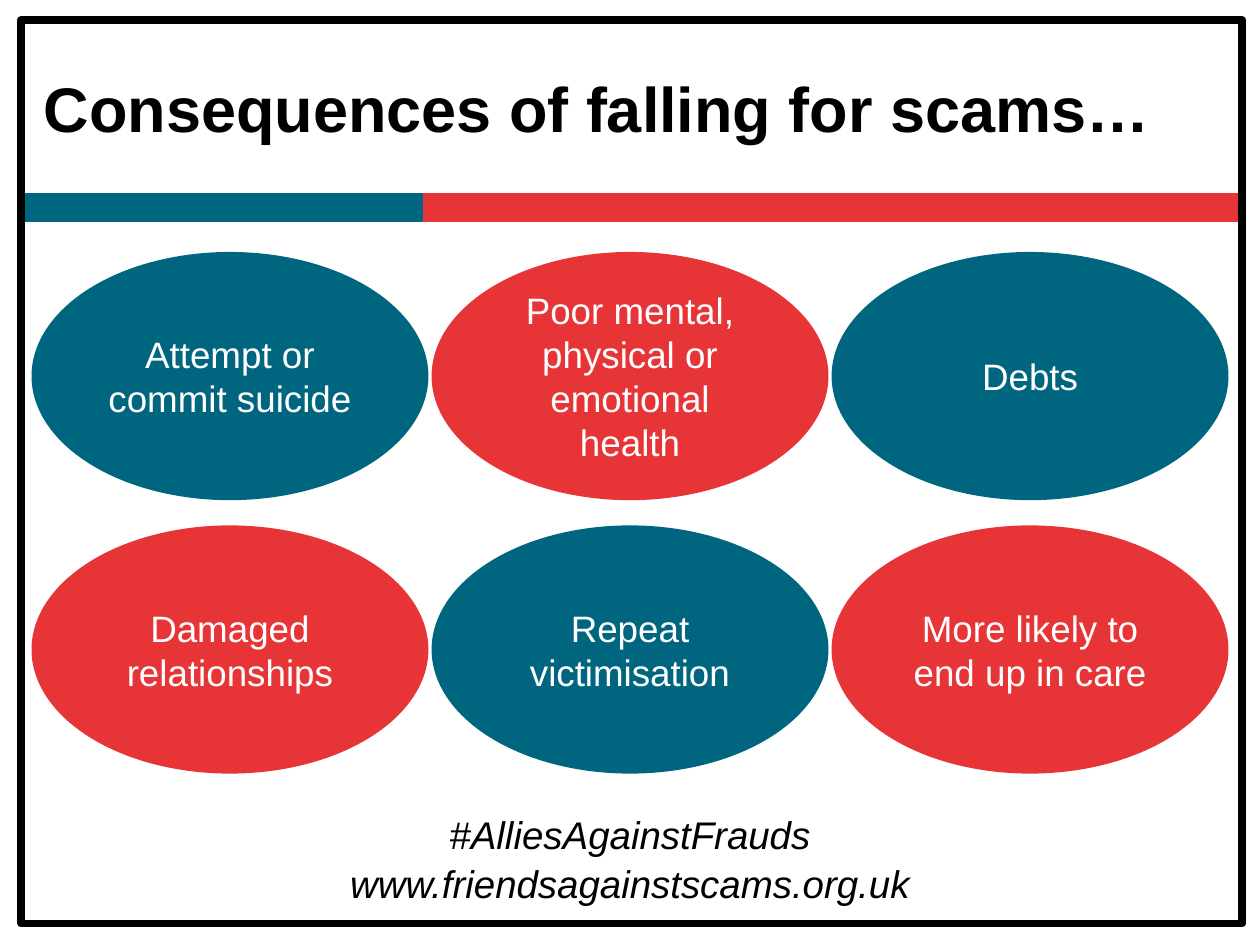
import dataclasses

import pptx
import pptx.dml.color
import pptx.enum.shapes
import pptx.enum.text
import pptx.util

Inches = pptx.util.Inches
Pt = pptx.util.Pt
Color = pptx.dml.color.RGBColor.from_string
Shape = pptx.enum.shapes.MSO_SHAPE
Align = pptx.enum.text.PP_ALIGN
Anchor = pptx.enum.text.MSO_ANCHOR


@dataclasses.dataclass(frozen=True)
class Theme:
    font: str = "Arial"
    teal: str = "006680"
    red: str = "E73437"
    black: str = "000000"
    white: str = "FFFFFF"
    title_size: float = 36
    bubble_size: float = 21
    footer_size: float = 22


THEME = Theme()
CONSEQUENCES = [
    ["Attempt or commit suicide", "Poor mental, physical or emotional health", "Debts"],
    ["Damaged relationships", "Repeat victimisation", "More likely to end up in care"],
]


def write_text(shape, text, *, size, color, bold=False, italic=False,
               align=Align.CENTER, anchor=Anchor.MIDDLE):
    frame = shape.text_frame
    frame.word_wrap = True
    frame.vertical_anchor = anchor
    para = frame.paragraphs[0]
    para.alignment = align
    span = para.add_run()
    span.text = text
    span.font.name = THEME.font
    span.font.size = Pt(size)
    span.font.color.rgb = Color(color)
    span.font.bold = bold
    span.font.italic = italic


def add_box(page, left, top, width, height):
    return page.shapes.add_textbox(Inches(left), Inches(top), Inches(width), Inches(height))


def add_figure(page, kind, left, top, width, height, fill=None, line=None, line_width=2):
    shape = page.shapes.add_shape(kind, Inches(left), Inches(top), Inches(width), Inches(height))
    shape.shadow.inherit = False
    if fill:
        shape.fill.solid()
        shape.fill.fore_color.rgb = Color(fill)
    else:
        shape.fill.background()
    if line:
        shape.line.color.rgb = Color(line)
        shape.line.width = Pt(line_width)
    else:
        shape.line.fill.background()
    return shape


def add_footer(page, left, top, width, line_step):
    for index, text in enumerate(["#AlliesAgainstFrauds", "www.friendsagainstscams.org.uk"]):
        box = add_box(page, left, top + index * line_step, width, 0.47)
        write_text(box, text, size=THEME.footer_size, color=THEME.black,
                   italic=True, anchor=Anchor.TOP)


def add_border(page, left, top, width, height):
    """Draw the outer frame over the two-colour band under the title."""
    band_top, band_height = top + 1.39, 0.2
    add_figure(page, Shape.RECTANGLE, left + 0.25, band_top, width - 0.25, band_height,
               THEME.red, THEME.red)
    add_figure(page, Shape.RECTANGLE, left, band_top, 3.17, band_height,
               THEME.teal, THEME.teal)
    add_figure(page, Shape.RECTANGLE, left, top, width, height,
               line=THEME.black, line_width=4.5)


def add_title(page, left, top, width, height):
    write_text(add_box(page, left, top, width, height), "Consequences of falling for scams…",
               size=THEME.title_size, color=THEME.black, bold=True,
               align=Align.LEFT, anchor=Anchor.TOP)


def add_bubbles(page, left, top, width, height):
    """Fill the box with a grid of ellipses in alternating colours."""
    bubble_width, bubble_height = 3.15, 1.97
    column_step = (width - bubble_width) / (len(CONSEQUENCES[0]) - 1)
    row_step = (height - bubble_height) / (len(CONSEQUENCES) - 1)
    for row, labels in enumerate(CONSEQUENCES):
        for column, label in enumerate(labels):
            fill = THEME.red if (row + column) % 2 else THEME.teal
            bubble = add_figure(page, Shape.OVAL, left + column * column_step,
                                top + row * row_step, bubble_width, bubble_height, fill)
            write_text(bubble, label, size=THEME.bubble_size, color=THEME.white)


def main():
    deck = pptx.Presentation()
    deck.slide_width, deck.slide_height = Inches(10), Inches(7.5)
    page = deck.slides.add_slide(deck.slide_layouts[6])
    add_footer(page, 0, 6.39, 10, 0.39)
    add_border(page, 0.17, 0.16, 9.69, 7.17)
    add_title(page, 0.25, 0.5, 9.42, 1.25)
    add_bubbles(page, 0.25, 2, 9.5, 4.14)
    deck.save("out.pptx")


if __name__ == "__main__":
    main()
